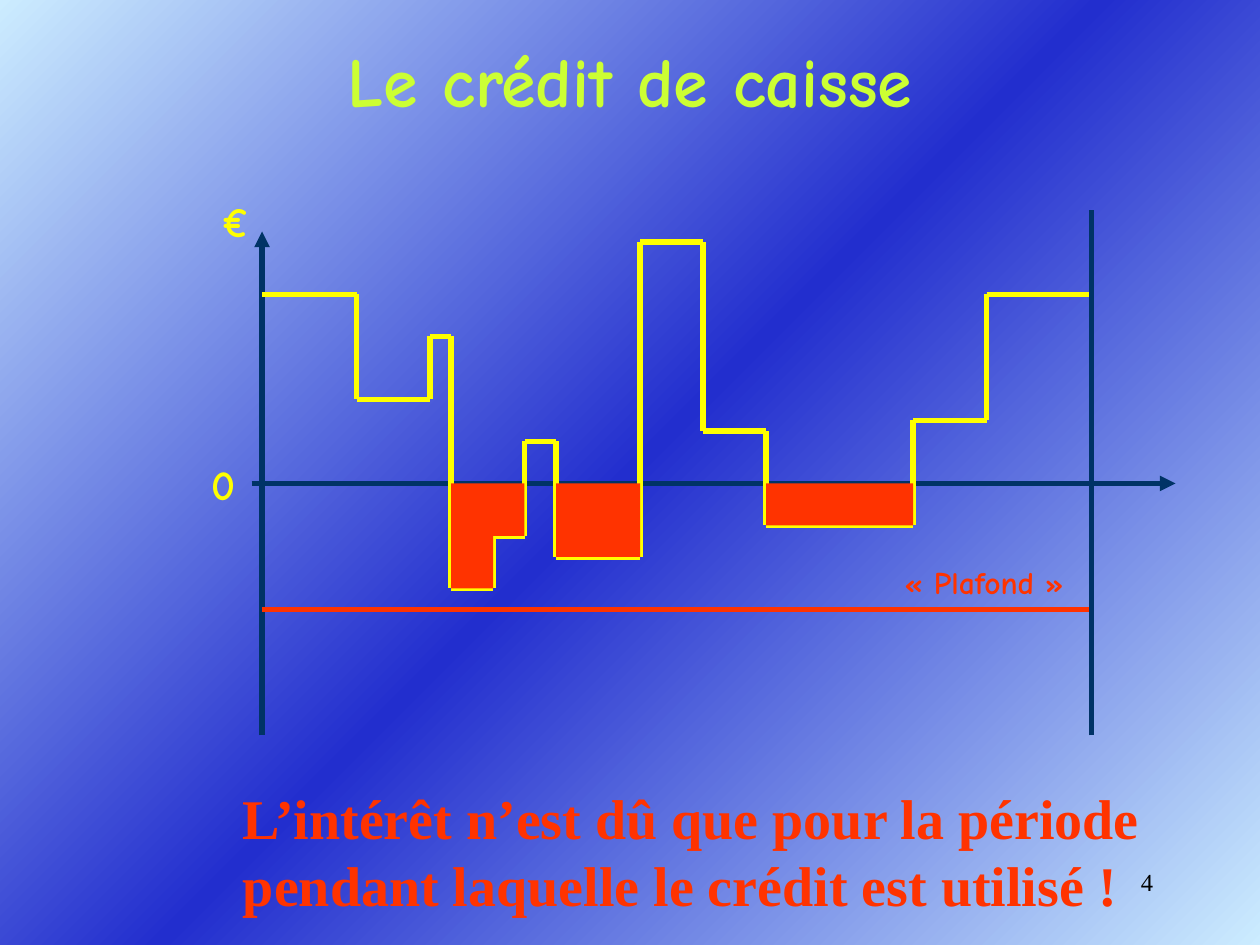
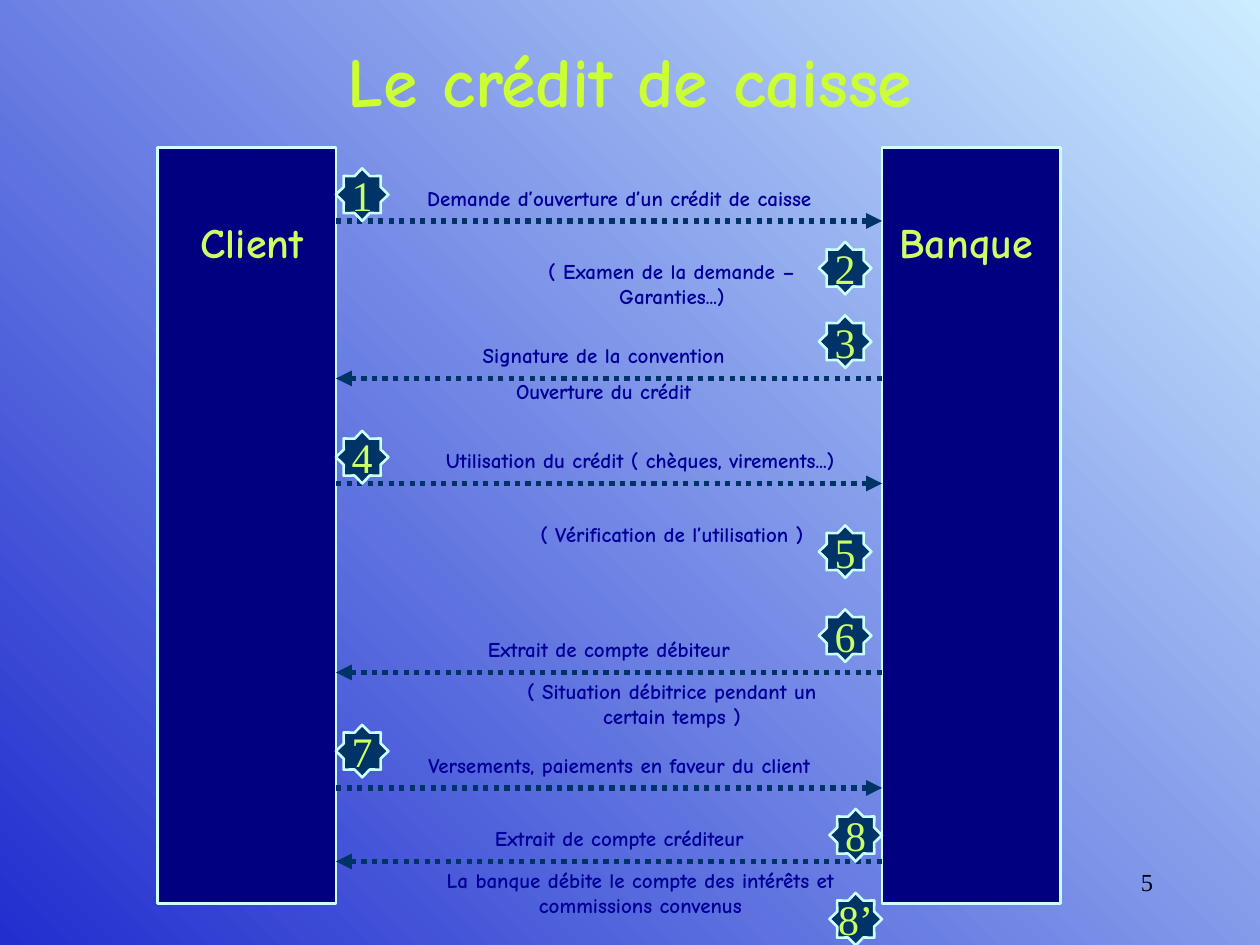
from dataclasses import dataclass
from itertools import pairwise

from lxml.etree import SubElement
from pptx import Presentation
from pptx.dml.color import RGBColor
from pptx.enum.dml import MSO_LINE
from pptx.enum.shapes import MSO_CONNECTOR, MSO_SHAPE
from pptx.enum.text import MSO_ANCHOR, PP_ALIGN
from pptx.oxml.ns import qn
from pptx.util import Inches, Pt


@dataclass(frozen=True)
class Theme:
    """Colours, fonts and sizes in points."""
    deep: str = "222ECE"
    pale: str = "CCECFF"
    lime: str = "CCFF33"
    soft: str = "CCFF66"
    yellow: str = "FFFF00"
    red: str = "FF3300"
    teal: str = "003366"
    navy: str = "000080"
    ink: str = "000099"
    edge: str = "CCFFFF"
    black: str = "000000"
    comic: str = "Comic Neue"
    serif: str = "Times New Roman"
    title: int = 40
    alert: int = 32
    label: int = 24
    limit: int = 18
    page: int = 14
    note: int = 12
    thick: float = 3
    thin: float = 1.5


T = Theme()
CELL = 1 / 12


@dataclass(frozen=True)
class Box:
    """A region in inches, split into cells of a twelfth of an inch."""
    left: float
    top: float
    width: float
    height: float

    def sub(self, x, y, w, h):
        """Give the box found at a cell position inside this one."""
        return Box(self.left + x * CELL, self.top + y * CELL, w * CELL, h * CELL)

    def spot(self, x, y):
        """Give the lengths of one cell position."""
        return Inches(self.left + x * CELL), Inches(self.top + y * CELL)

    def frame(self):
        """Give the four lengths of the box."""
        return [Inches(v) for v in (self.left, self.top, self.width, self.height)]


def paint(slide, stops, angle):
    """Fill the background with a gradient."""
    fill = slide.background.fill
    fill.gradient()
    fill.gradient_angle = angle
    ramp = slide.element.find(".//" + qn("a:gsLst"))
    for old in list(ramp):
        ramp.remove(old)
    for pos, color in stops:
        stop = SubElement(ramp, qn("a:gs"), pos=str(pos * 1000))
        SubElement(stop, qn("a:srgbClr"), val=color)


def write(frame, lines, size, color, font=T.comic, bold=True, align=PP_ALIGN.LEFT, gap=0):
    """Write one paragraph per line in one style."""
    for i, line in enumerate(lines):
        para = frame.paragraphs[0] if i == 0 else frame.add_paragraph()
        para.alignment = align
        if i:
            para.space_before = Pt(gap)
        run = para.add_run()
        run.text = line
        run.font.size = Pt(size)
        run.font.name = font
        run.font.bold = bold
        run.font.color.rgb = RGBColor.from_string(color)


def label(slide, box, lines, size, color, **style):
    """Place a wrapping text box."""
    frame = slide.shapes.add_textbox(*box.frame()).text_frame
    frame.word_wrap = True
    write(frame, lines, size, color, **style)


def solid(slide, kind, box, fill, edge=None):
    """Place a flat shape with an optional outline."""
    shape = slide.shapes.add_shape(kind, *box.frame())
    shape.shadow.inherit = False
    shape.fill.solid()
    shape.fill.fore_color.rgb = RGBColor.from_string(fill)
    if edge:
        shape.line.color.rgb = RGBColor.from_string(edge)
        shape.line.width = Pt(T.thin)
    else:
        shape.line.fill.background()
    return shape


def rule(slide, start, end, color, arrow=False, dots=False):
    """Draw a straight line, dotted or with an arrowhead on request."""
    link = slide.shapes.add_connector(MSO_CONNECTOR.STRAIGHT, *start, *end)
    link.line.color.rgb = RGBColor.from_string(color)
    link.line.width = Pt(T.thick)
    if dots:
        link.line.dash_style = MSO_LINE.ROUND_DOT
    props = link.element.spPr
    if arrow:
        SubElement(props.find(qn("a:ln")), qn("a:tailEnd"), type="triangle")
    SubElement(props, qn("a:effectLst"))


def base(deck, stops, angle, page):
    """Add a slide with its background, title and number."""
    slide = deck.slides.add_slide(deck.slide_layouts[6])
    paint(slide, stops, angle)
    label(slide, Box(1.5, 0.25, 7, 0.75), ["Le crédit de caisse"], T.title, T.lime,
          align=PP_ALIGN.CENTER)
    label(slide, Box(7.17, 6.83, 2.08, 0.5), [str(page)], T.page, T.black,
          font=T.serif, bold=False, align=PP_ALIGN.RIGHT)
    return slide


def plot(slide, box):
    """Draw the account balance over time with its overdrafts."""
    zero, end = 26, 79
    steps = [(0, 18), (9, 8), (16, 14), (18, -10), (22, -5), (25, 4), (28, -7),
             (36, 23), (42, 5), (48, -4), (62, 6), (69, 18)]
    debts = [(18, 0, 7, 5), (18, -5, 4, 5), (28, 0, 8, 7), (48, 0, 14, 4)]

    def at(x, level):
        return box.spot(x, zero - level)

    def tag(x, level, w, h, text, size, color):
        label(slide, box.sub(x, zero - level, w, h), [text], size, color)

    rule(slide, at(0, -24), at(0, 24), T.teal, arrow=True)
    tag(-5, 28, 6, 6, "€", T.label, T.yellow)
    rule(slide, at(-1, 0), at(88 - 1, 0), T.teal, arrow=True)
    tag(-6, 3, 7, 6, "0", T.label, T.yellow)

    ends = [x for x, _ in steps[1:]] + [end]
    trace = [p for (x, v), stop in zip(steps, ends) for p in ((x, v), (stop, v))]
    for a, b in pairwise(trace):
        rule(slide, at(*a), at(*b), T.yellow)
    for x, level, w, h in debts:
        solid(slide, MSO_SHAPE.RECTANGLE, box.sub(x, zero - level, w, h), T.red)

    rule(slide, at(0, -12), at(end, -12), T.red)
    tag(60, -7, 21, 5, "« Plafond »", T.limit, T.red)
    rule(slide, at(end, -24), at(end, 26), T.teal)


def alert(slide, box):
    """State when interest is due."""
    label(slide, box, ["L’intérêt n’est dû que pour la période",
                       "pendant laquelle le crédit est utilisé !"],
          T.alert, T.red, font=T.serif)


def flow(slide, box):
    """Draw the exchanges between client and bank."""
    near, far, bar = 17, 69, 17
    arrows = [(7, True), (22, False), (32, True), (50, False), (61, True), (68, False)]
    marks = [("1", 17, 2), ("2", 63, 9), ("3", 63, 16), ("4", 17, 27), ("5", 63, 36),
             ("6", 63, 44), ("7", 17, 55), ("8", 64, 63), ("8’", 64, 71)]
    notes = [
        (17, 3, 54, 4, ["Demande d’ouverture d’un crédit de caisse"]),
        (31, 10, 36, 6, ["( Examen de la demande – Garanties...)"]),
        (19, 18, 47, 7, ["Signature de la convention", "Ouverture du crédit"]),
        (22, 28, 48, 4, ["Utilisation du crédit ( chèques, virements...)"]),
        (31, 35, 36, 4, ["( Vérification de l’utilisation )"]),
        (19, 46, 48, 4, ["Extrait de compte débiteur"]),
        (31, 50, 36, 6, ["( Situation débitrice pendant un certain temps )"]),
        (20, 57, 48, 4, ["Versements, paiements en faveur du client"]),
        (20, 64, 48, 4, ["Extrait de compte créditeur"]),
        (22, 68, 48, 6, ["La banque débite le compte des intérêts et commissions convenus"]),
    ]
    for x in (0, far):
        solid(slide, MSO_SHAPE.RECTANGLE, box.sub(x, 0, bar, 72), T.navy, T.edge)
    for y, out in arrows:
        start, end = (near, far) if out else (far, near)
        rule(slide, box.spot(start, y), box.spot(end, y), T.teal, arrow=True, dots=True)
    for x, name in ((1, "Client"), (far, "Banque")):
        label(slide, box.sub(x, 6, 16, 6), [name], T.label, T.soft, align=PP_ALIGN.CENTER)
    for text, x, y in marks:
        star = solid(slide, MSO_SHAPE.STAR_8_POINT, box.sub(x, y, 5, 5), T.teal, T.edge)
        star.adjustments[0] = 0.38
        frame = star.text_frame
        frame.word_wrap = False
        frame.vertical_anchor = MSO_ANCHOR.MIDDLE
        write(frame, [text], T.label, T.soft, font=T.serif, bold=False,
              align=PP_ALIGN.CENTER)
    for x, y, w, h, lines in notes:
        label(slide, box.sub(x, y, w, h), lines, T.note, T.ink,
              align=PP_ALIGN.CENTER, gap=T.note / 2)


def main():
    """Build both slides and save them."""
    deck = Presentation()
    deck.slide_width, deck.slide_height = Inches(10), Inches(7.5)

    curve = base(deck, [(0, T.pale), (50, T.deep), (100, T.pale)], 315, 4)
    plot(curve, Box(2.08, 1.67, 6.58, 4.17))
    alert(curve, Box(1.83, 6.17, 8.17, 1.17))

    trade = base(deck, [(0, T.deep), (100, T.pale)], 45, 5)
    flow(trade, Box(1.25, 1.17, 7.17, 6))

    deck.save("out.pptx")


if __name__ == "__main__":
    main()
